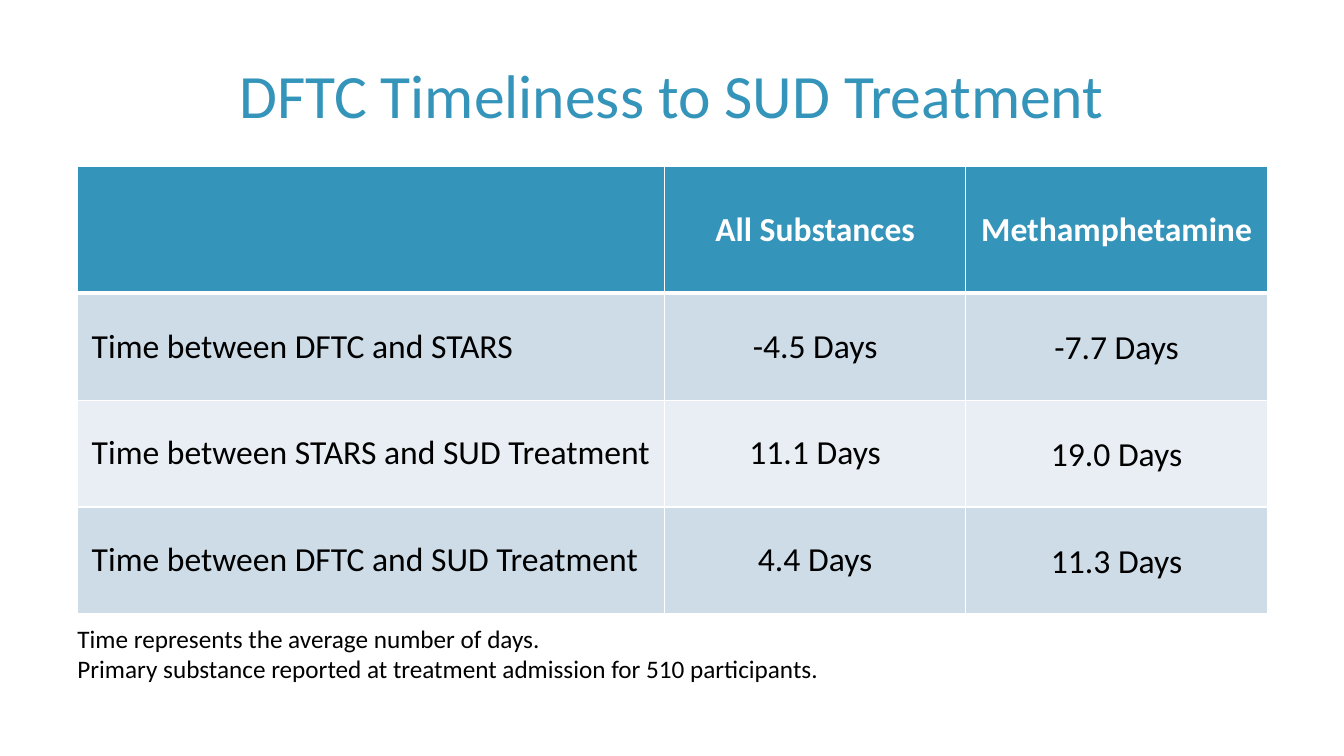
"""Build the slide on DFTC timeliness to SUD treatment."""
from lxml import etree
from pptx import Presentation
from pptx.dml.color import RGBColor
from pptx.enum import text
from pptx.oxml.ns import qn
from pptx.util import Inches, Pt

TITLE = "DFTC Timeliness to SUD Treatment"
ROWS = [
    ("", "All Substances", "Methamphetamine"),
    ("Time between DFTC and STARS", "-4.5 Days", "-7.7 Days"),
    ("Time between STARS and SUD Treatment", "11.1 Days", "19.0 Days"),
    ("Time between DFTC and SUD Treatment", "4.4 Days", "11.3 Days"),
]
NOTES = [
    "Time represents the average number of days.",
    "Primary substance reported at treatment admission for 510 participants.",
]
COLORS = {"accent": "3494BA", "odd": "CEDCE7", "even": "E8EEF3",
          "white": "FFFFFF", "black": "000000"}
COL_WIDTHS = (5.82, 2.99, 2.99)
ROW_HEIGHTS = (1.26, 1.06, 1.06, 1.06)
TITLE_BOX = (0.91, 0.36, 11.51, 1.24)
TABLE_BOX = (0.77, 1.65, sum(COL_WIDTHS), sum(ROW_HEIGHTS))
NOTES_BOX = (0.67, 6.13, 7.74, 1.01)
LEFT, CENTER = text.PP_ALIGN.LEFT, text.PP_ALIGN.CENTER
MIDDLE = text.MSO_ANCHOR.MIDDLE


def set_all(obj, values):
    for name, value in values.items():
        setattr(obj, name, value)


def write(p, words, size, color, align=LEFT, bold=False, spacing=1.0):
    set_all(p, {"alignment": align, "line_spacing": spacing})
    font = p.add_run().font if not words else None
    r = p.runs[0] if font else p.add_run()
    r.text = words
    set_all(r.font, {"name": "Calibri", "size": Pt(size), "bold": bold})
    r.font.color.rgb = RGBColor.from_string(COLORS[color])


def add_borders(cell, widths):
    tc_pr = cell._tc.get_or_add_tcPr()
    for side, width in widths.items():
        ln = etree.SubElement(tc_pr, qn("a:ln" + side), w=str(Pt(width)))
        fill = etree.SubElement(ln, qn("a:solidFill"))
        etree.SubElement(fill, qn("a:srgbClr"), val=COLORS["white"])


def add_title(s):
    sp = s.shapes.title
    set_all(sp, dict(zip(("left", "top", "width", "height"), map(Inches, TITLE_BOX))))
    tf = sp.text_frame
    set_all(tf, {"vertical_anchor": MIDDLE, "word_wrap": True})
    write(tf.paragraphs[0], TITLE, 44, "accent", CENTER, spacing=0.9)


def add_times(s):
    table = s.shapes.add_table(len(ROWS), len(COL_WIDTHS), *map(Inches, TABLE_BOX)).table
    for col, width in zip(table.columns, COL_WIDTHS):
        col.width = Inches(width)
    for i, (row, height) in enumerate(zip(ROWS, ROW_HEIGHTS)):
        table.rows[i].height = Inches(height)
        header = i == 0
        fill = "accent" if header else ("odd" if i % 2 else "even")
        for j, words in enumerate(row):
            cell = table.cell(i, j)
            tight = j == 2 and not header
            side, end = (0.07, 0) if tight else (0.14, 0.07)
            set_all(cell, {"vertical_anchor": MIDDLE,
                           "margin_left": Inches(side), "margin_right": Inches(side),
                           "margin_top": Inches(end), "margin_bottom": Inches(end)})
            add_borders(cell, {"L": 1, "R": 1, "T": 3 if i == 1 else 1,
                               "B": 3 if header else 1})
            cell.fill.solid()
            cell.fill.fore_color.rgb = RGBColor.from_string(COLORS[fill])
            if words:
                write(cell.text_frame.paragraphs[0], words, 24,
                      "white" if header else "black", CENTER if j else LEFT,
                      header, 1.07 if tight else 1.0)


def add_notes(s):
    tf = s.shapes.add_textbox(*map(Inches, NOTES_BOX)).text_frame
    set_all(tf, {"word_wrap": True, "auto_size": text.MSO_AUTO_SIZE.SHAPE_TO_FIT_TEXT})
    for i, words in enumerate(NOTES):
        p = tf.add_paragraph() if i else tf.paragraphs[0]
        write(p, words, 18, "black")


def main():
    prs = Presentation()
    set_all(prs, {"slide_width": Inches(13.33), "slide_height": Inches(7.5)})
    s = prs.slides.add_slide(prs.slide_layouts[5])
    add_title(s)
    add_times(s)
    add_notes(s)
    prs.save("out.pptx")


if __name__ == "__main__":
    main()
